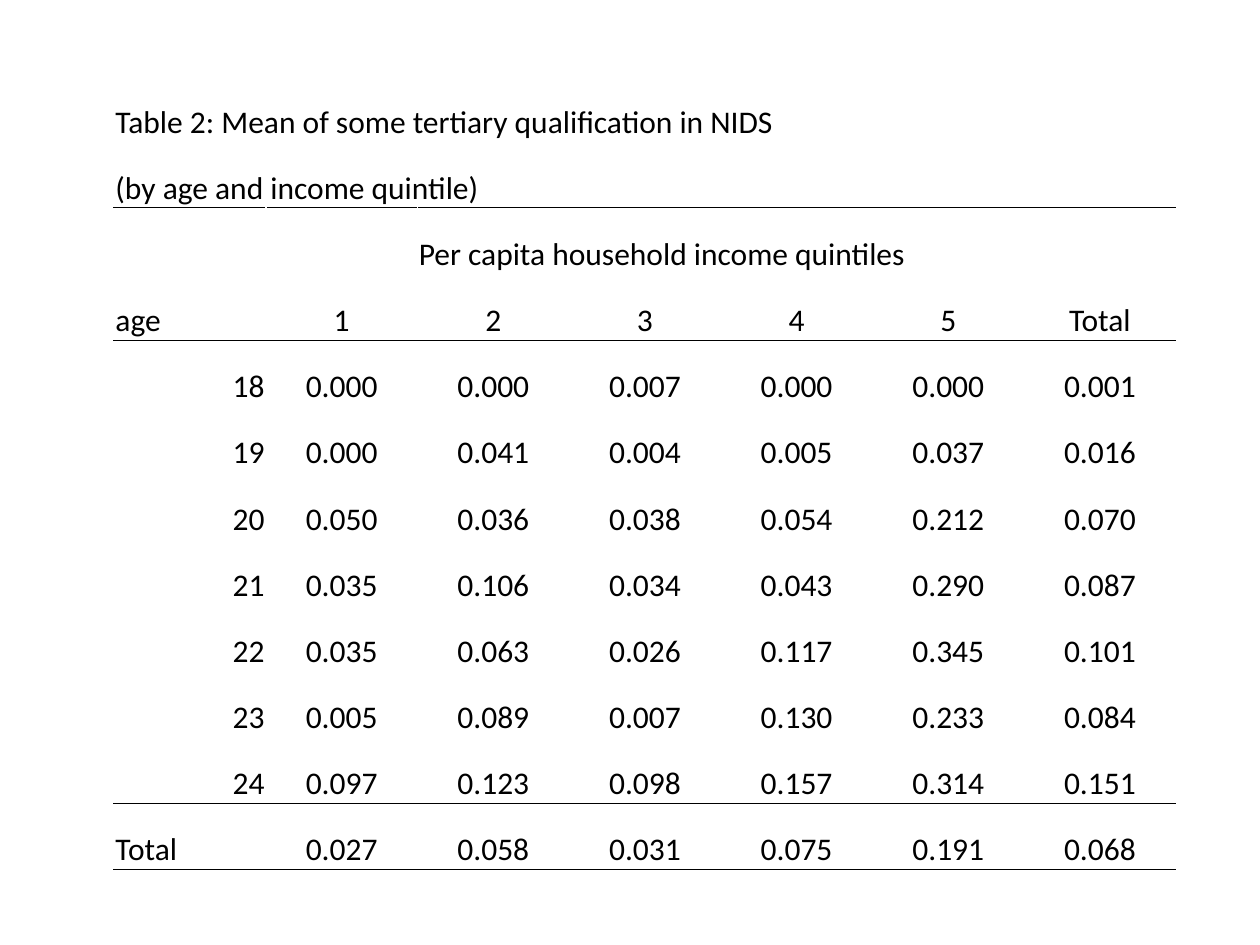
from lxml.etree import SubElement
from pptx import Presentation
from pptx.dml.color import RGBColor
from pptx.enum.text import MSO_ANCHOR, PP_ALIGN
from pptx.oxml.ns import qn
from pptx.util import Pt

COLORS = {"ink": "000000"}
FONT = {"name": "Calibri", "size": Pt(18), "bold": False}
CELL = {
    "margin_left": Pt(0.75),
    "margin_right": Pt(0.75),
    "margin_top": Pt(0.75),
    "margin_bottom": Pt(0),
    "vertical_anchor": MSO_ANCHOR.BOTTOM,
}
TABLE_FLAGS = {"first_row": False, "horz_banding": False}
HEADINGS = [
    (0, 0, 5, "Table 2: Mean of some tertiary qualification in NIDS"),
    (1, 0, 3, "(by age and income quintile)"),
    (2, 2, 4, "Per capita household income quintiles"),
]
GRID = [
    ["age", "1", "2", "3", "4", "5", "Total"],
    ["18", "0.000", "0.000", "0.007", "0.000", "0.000", "0.001"],
    ["19", "0.000", "0.041", "0.004", "0.005", "0.037", "0.016"],
    ["20", "0.050", "0.036", "0.038", "0.054", "0.212", "0.070"],
    ["21", "0.035", "0.106", "0.034", "0.043", "0.290", "0.087"],
    ["22", "0.035", "0.063", "0.026", "0.117", "0.345", "0.101"],
    ["23", "0.005", "0.089", "0.007", "0.130", "0.233", "0.084"],
    ["24", "0.097", "0.123", "0.098", "0.157", "0.314", "0.151"],
    ["Total", "0.027", "0.058", "0.031", "0.075", "0.191", "0.068"],
]
RULED_ROWS = {1, 3, 10, 11}


def apply_format(target, values):
    for name, value in values.items():
        setattr(target, name, value)


def write_cell(cell, text, alignment):
    para = cell.text_frame.paragraphs[0]
    para.alignment = alignment
    span = para.add_run()
    span.text = text
    apply_format(span.font, FONT)
    span.font.color.rgb = RGBColor.from_string(COLORS["ink"])


def draw_border(cell, side):
    properties = cell._tc.get_or_add_tcPr()
    line = SubElement(properties, qn(f"a:{side}"), w=str(Pt(0.5)))
    fill = SubElement(line, qn("a:solidFill"))
    SubElement(fill, qn("a:srgbClr"), val=COLORS["ink"])


def style_cell(cell, row):
    apply_format(cell, CELL)
    if row - 1 in RULED_ROWS:
        draw_border(cell, "lnT")
    if row in RULED_ROWS:
        draw_border(cell, "lnB")
    cell.fill.background()


def pick_alignment(column, text):
    if column:
        return PP_ALIGN.CENTER
    return PP_ALIGN.RIGHT if text.isdigit() else PP_ALIGN.LEFT


def add_quintile_table(page, left, top, width, height):
    row_count = len(HEADINGS) + len(GRID)
    column_count = len(GRID[0])
    box = page.shapes.add_table(
        row_count, column_count, Pt(left), Pt(top), Pt(width), Pt(height)
    )
    table = box.table
    apply_format(table, TABLE_FLAGS)
    for column in table.columns:
        column.width = Pt(width / column_count)
    for index, row in enumerate(table.rows):
        row.height = Pt(height / row_count)
        for cell in row.cells:
            style_cell(cell, index)
    for row, column, count, text in HEADINGS:
        cell = table.cell(row, column)
        cell.merge(table.cell(row, column + count - 1))
        write_cell(cell, text, PP_ALIGN.LEFT)
    for row, values in enumerate(GRID, len(HEADINGS)):
        for column, text in enumerate(values):
            write_cell(table.cell(row, column), text, pick_alignment(column, text))


def main():
    deck = Presentation()
    apply_format(deck, {"slide_width": Pt(720), "slide_height": Pt(540)})
    page = deck.slides.add_slide(deck.slide_layouts[6])
    add_quintile_table(page, 65.25, 43.2, 606.75, 453.6)
    deck.save("out.pptx")


if __name__ == "__main__":
    main()
